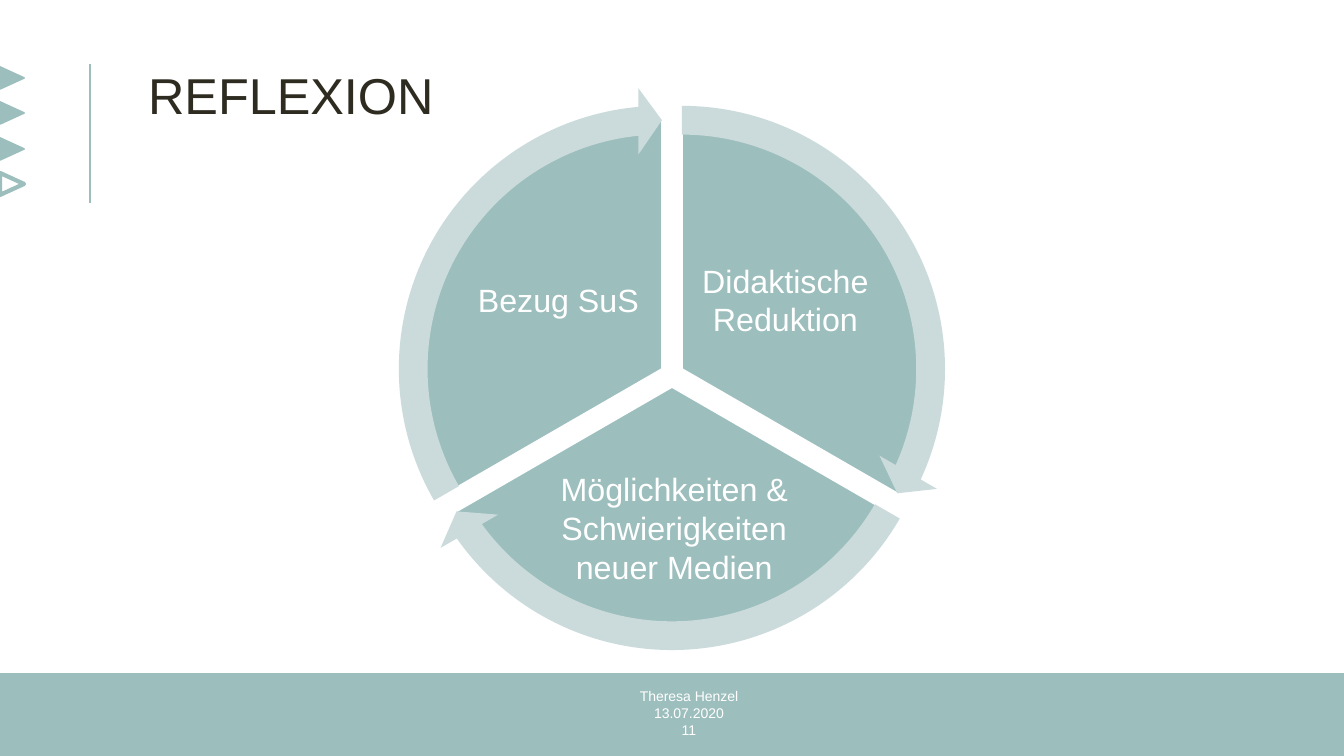
from lxml.etree import SubElement
from pptx import Presentation
from pptx.dml.color import RGBColor
from pptx.enum.shapes import MSO_CONNECTOR as CONN, MSO_SHAPE as SHAPE
from pptx.enum.text import MSO_ANCHOR as ANCHOR, PP_ALIGN as ALIGN
from pptx.oxml.ns import qn
from pptx.util import Pt

PX = 12192000 / 1344
SAGE = RGBColor(0x9C, 0xBE, 0xBD)
PALE = RGBColor(0xCB, 0xDB, 0xDB)
WHITE = RGBColor(0xFF, 0xFF, 0xFF)
DARK = RGBColor(0x2E, 0x2B, 0x21)

PIE_SIZE = 502
RING = 31
SEGMENTS = [
    ((431, 118), (162, 18), (14.725, 161.994),
     "Didaktische Reduktion", (696, 225, 179, 149)),
    ((421, 136), (18, 90), (86.72, 18.005),
     "Möglichkeiten & Schwierigkeiten neuer Medien", (540, 462, 269, 131)),
    ((411, 118), (90, 162), (158.73, 90),
     "Bezug SuS", (469, 225, 179, 149)),
]


def px(*lengths):
    return [round(n * PX) for n in lengths]


def set_all(target, values):
    for name, value in values.items():
        setattr(target, name, value)


def add_shape(shapes, kind, box, fill, line=None, width=1.25, adj=(), rotation=0):
    sp = shapes.add_shape(kind, *px(*box))
    sp.shadow.inherit = False
    sp.rotation = rotation
    sp.fill.solid()
    sp.fill.fore_color.rgb = fill
    if line is None:
        sp.line.fill.background()
    else:
        sp.line.color.rgb = line
        sp.line.width = Pt(width)
    for i, value in enumerate(adj):
        sp.adjustments[i] = value
    return sp


def add_text(shapes, box, lines, size, color=WHITE, inset=None, **fmt):
    tf = shapes.add_textbox(*px(*box)).text_frame
    set_all(tf, {"word_wrap": True, "vertical_anchor": ANCHOR.MIDDLE})
    if inset is not None:
        margin = px(inset)[0]
        set_all(tf, {f"margin_{side}": margin
                     for side in ("left", "right", "top", "bottom")})
    for i, line in enumerate(lines):
        p = tf.add_paragraph() if i else tf.paragraphs[0]
        set_all(p, {"alignment": ALIGN.CENTER, **fmt})
        r = p.add_run()
        r.text = line
        set_all(r.font, {"name": "Arial", "size": Pt(size)})
        r.font.color.rgb = color
    return tf


def add_rule(shapes, x, top, bottom):
    line = shapes.add_connector(CONN.STRAIGHT, *px(x, bottom, x, top))
    line.line.color.rgb = SAGE
    line.line.width = Pt(1.5)
    SubElement(line._element.spPr, qn("a:effectLst"))


def add_title(shapes):
    tf = add_text(shapes, (113, 66, 1157, 110), ["REFLEXION"], 36, DARK,
                  alignment=ALIGN.LEFT, line_spacing=0.9)
    tf.vertical_anchor = ANCHOR.TOP
    pPr = tf.paragraphs[0]._p.get_or_add_pPr()
    indent = px(10)[0]
    pPr.set("marL", str(indent))
    pPr.set("indent", str(-indent))
    SubElement(pPr, qn("a:buChar")).set("char", " ")


def add_markers(shapes):
    for i in range(4):
        last = i == 3
        add_shape(shapes, SHAPE.ISOSCELES_TRIANGLE, (1, 66 + i * 71 // 2, 22, 24),
                  WHITE if last else SAGE, SAGE, 3 if last else 1.25, rotation=90)


def add_cycle(shapes):
    group = shapes.add_group_shape().shapes
    for (x, y), angles, _, label, box in SEGMENTS:
        add_shape(group, SHAPE.PIE, (x, y, PIE_SIZE, PIE_SIZE), SAGE, WHITE, adj=angles)
        add_text(group, box, [label], 23, inset=3)
    size = PIE_SIZE + 2 * RING
    for (x, y), _, (end, start), *_ in SEGMENTS:
        add_shape(group, SHAPE.CIRCULAR_ARROW, (x - RING, y - RING, size, size), PALE,
                  adj=(0.051, 3.275, end, start, 0.059))


def main():
    prs = Presentation()
    prs.slide_width, prs.slide_height = px(1344, 756)
    s = prs.slides.add_slide(prs.slide_layouts[6])
    add_rule(s.shapes, 90, 64, 203)
    add_shape(s.shapes, SHAPE.RECTANGLE, (0, 673, 1344, 83), SAGE)
    add_title(s.shapes)
    add_markers(s.shapes)
    add_cycle(s.shapes)
    add_text(s.shapes, (445, 690, 488, 46), ["Theresa Henzel", "13.07.2020", "11"], 10)
    prs.save("out.pptx")


if __name__ == "__main__":
    main()
